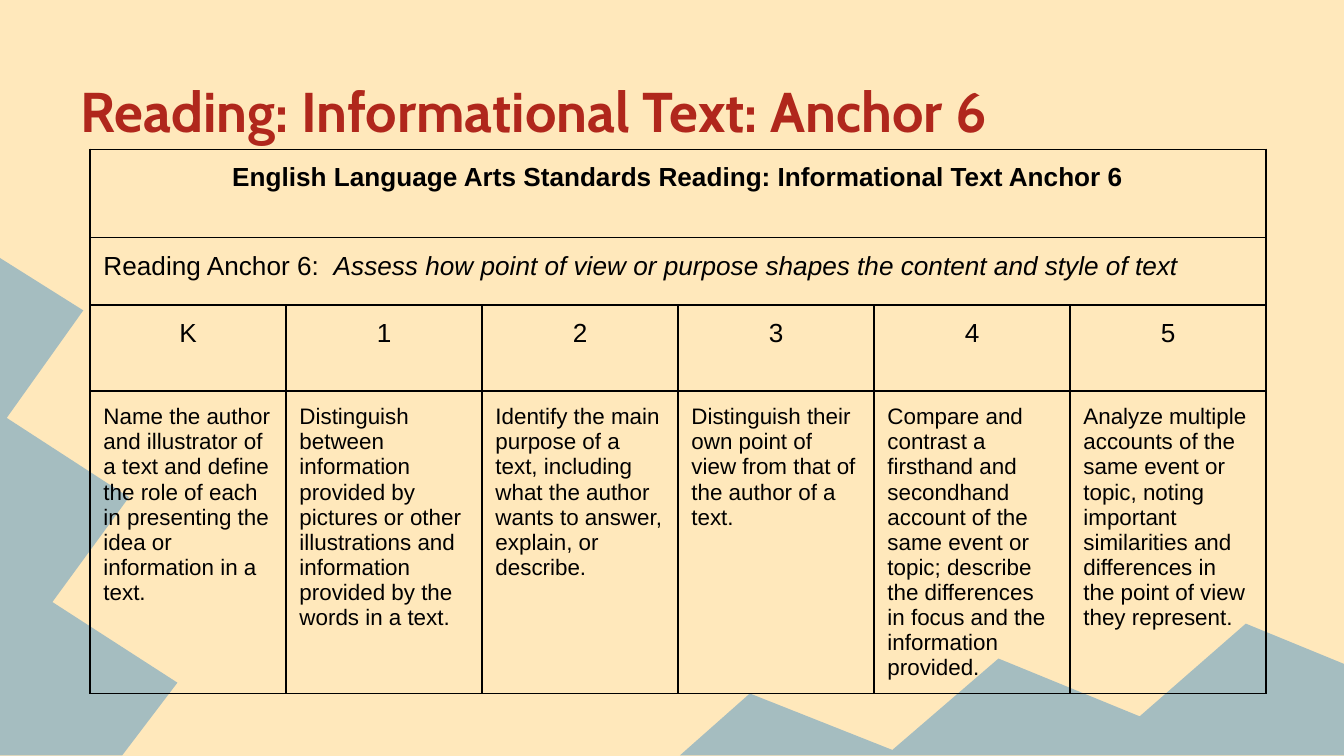
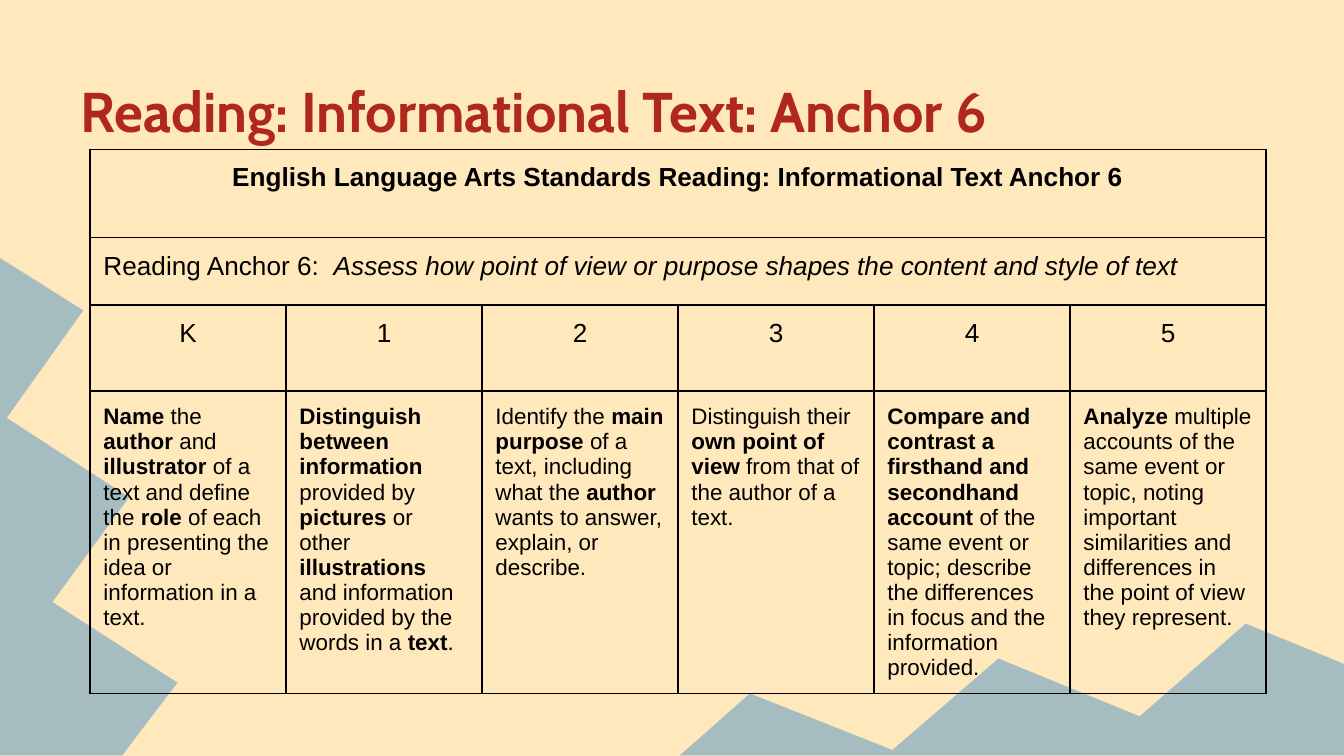
from dataclasses import dataclass

from lxml.etree import SubElement
from pptx import Presentation
from pptx.dml.color import RGBColor
from pptx.enum.text import MSO_ANCHOR as Anchor, MSO_AUTO_SIZE as AutoSize, PP_ALIGN as Align
from pptx.oxml.ns import qn
from pptx.slide import Slide
from pptx.table import Table, _Cell as Cell
from pptx.util import Inches, Pt

# Shared style
SLIDE_WIDTH = Inches(10)
SLIDE_HEIGHT = SLIDE_WIDTH * 9 // 16
CREAM = RGBColor(0xFF, 0xE8, 0xBB)
BLUE_GREY = RGBColor(0xA5, 0xBD, 0xC0)
RED = RGBColor(0xB0, 0x27, 0x1C)
BLACK = RGBColor(0, 0, 0)
TITLE_FONT, BODY_FONT = "Cabin", "Arial"
MARGIN = Inches(0.1)
BORDER = Pt(0.75)

# Jagged mountain outlines, in inches
LEFT_PEAKS = [(0, 1.92), (0, 5.62), (0.91, 5.62), (1.32, 5.08), (0.39, 4.48),
              (0.96, 3.7), (0.05, 3.11), (0.62, 2.31)]
BOTTOM_PEAKS = [(5.06, 5.62), (10, 5.62), (10, 4.94), (9.27, 4.64), (8.48, 5.33),
                (7.43, 4.9), (6.64, 5.58), (5.58, 5.16)]

# Table content
TITLE = "Reading: Informational Text: Anchor 6"
HEADING = "English Language Arts Standards Reading: Informational Text Anchor 6"
ANCHOR_LABEL = "Reading Anchor 6:  "
ANCHOR_TEXT = "Assess how point of view or purpose shapes the content and style of text"
ROW_HEIGHTS = [0.66, 0.5, 0.64, 2.19]
TABLE_WIDTH = 8.75


@dataclass(frozen=True)
class Grade:
    name: str
    standard: str  # key words stand between asterisks


GRADES = [
    Grade("K", "*Name* the *author* and *illustrator* of a text and define the *role* of each "
               "in presenting the idea or information in a text."),
    Grade("1", "*Distinguish between information* provided by *pictures* or other "
               "*illustrations* and information provided by the words in a *text*."),
    Grade("2", "Identify the *main purpose* of a text, including what the *author* wants to "
               "answer, explain, or describe."),
    Grade("3", "Distinguish their *own point of view* from that of the author of a text."),
    Grade("4", "*Compare and contrast a firsthand and secondhand account* of the same event or "
               "topic; describe the differences in focus and the information provided."),
    Grade("5", "*Analyze* multiple accounts of the same event or topic, noting important "
               "similarities and differences in the point of view they represent."),
]


def add_peaks(s: Slide, points: list[tuple[float, float]]) -> None:
    (x, y), *rest = [(Inches(px), Inches(py)) for px, py in points]
    builder = s.shapes.build_freeform(x, y)
    builder.add_line_segments(rest, close=True)
    sp = builder.convert_to_shape()
    sp.shadow.inherit = False
    sp.fill.solid()
    sp.fill.fore_color.rgb = BLUE_GREY
    sp.line.fill.background()
    s.shapes._spTree.insert(2, sp._element)  # behind the title


def add_title(s: Slide) -> None:
    sp = s.shapes.title
    sp.left, sp.top, sp.width, sp.height = Inches(0.5), Inches(0.23), Inches(9), Inches(0.94)
    tf = sp.text_frame
    tf.text = TITLE
    tf.auto_size = AutoSize.NONE
    tf.vertical_anchor = Anchor.BOTTOM
    tf.margin_left = tf.margin_right = tf.margin_top = tf.margin_bottom = MARGIN
    p = tf.paragraphs[0]
    p.alignment = Align.LEFT
    p.font.name, p.font.size, p.font.bold = TITLE_FONT, Pt(30), True
    p.font.color.rgb = RED


def style_cell(cell: Cell) -> None:
    cell.margin_left = cell.margin_right = cell.margin_top = cell.margin_bottom = MARGIN
    tcPr = cell._tc.get_or_add_tcPr()
    for side in ("lnL", "lnR", "lnT", "lnB"):
        ln = SubElement(tcPr, qn(f"a:{side}"), w=str(BORDER))
        fill = SubElement(ln, qn("a:solidFill"))
        SubElement(fill, qn("a:srgbClr"), val=str(BLACK))
    cell.fill.background()


def write(cell: Cell, text: str, size: int = 14, align: Align = Align.LEFT) -> None:
    """Write one paragraph, with the parts between asterisks in bold."""
    p = cell.text_frame.paragraphs[0]
    p.alignment = align
    p.font.name, p.font.size = BODY_FONT, Pt(size)
    p.font.color.rgb = BLACK
    for i, part in enumerate(text.split("*")):
        if part:
            r = p.add_run()
            r.text = part
            r.font.bold = i % 2 == 1


def add_standards(s: Slide, emphasis: bool) -> None:
    frame = s.shapes.add_table(len(ROW_HEIGHTS), len(GRADES), Inches(0.67), Inches(1.11),
                               Inches(TABLE_WIDTH), Inches(sum(ROW_HEIGHTS)))
    table: Table = frame.table
    table.first_row = table.horz_banding = False
    for row, height in zip(table.rows, ROW_HEIGHTS):
        row.height = Inches(height)
    for column in table.columns:
        column.width = Inches(TABLE_WIDTH / len(GRADES))
    for cell in table.iter_cells():
        style_cell(cell)

    # Heading and anchor rows span all grades
    last = len(GRADES) - 1
    for row in (0, 1):
        table.cell(row, 0).merge(table.cell(row, last))
    write(table.cell(0, 0), f"*{HEADING}*", align=Align.CENTER)
    write(table.cell(1, 0), ANCHOR_LABEL)
    r = table.cell(1, 0).text_frame.paragraphs[0].add_run()
    r.text = ANCHOR_TEXT
    r.font.italic = True

    # One column per grade
    for col, grade in enumerate(GRADES):
        write(table.cell(2, col), grade.name, align=Align.CENTER)
        text = grade.standard if emphasis else grade.standard.replace("*", "")
        write(table.cell(3, col), text, size=12)


def main() -> None:
    prs = Presentation()
    prs.slide_width, prs.slide_height = SLIDE_WIDTH, SLIDE_HEIGHT
    background = prs.slide_master.background.fill
    background.solid()
    background.fore_color.rgb = CREAM

    # Plain standards first, then the same with key words in bold
    for emphasis in (False, True):
        s = prs.slides.add_slide(prs.slide_layouts.get_by_name("Title Only"))
        for peaks in (BOTTOM_PEAKS, LEFT_PEAKS):
            add_peaks(s, peaks)
        add_title(s)
        add_standards(s, emphasis)
    prs.save("out.pptx")


if __name__ == "__main__":
    main()
